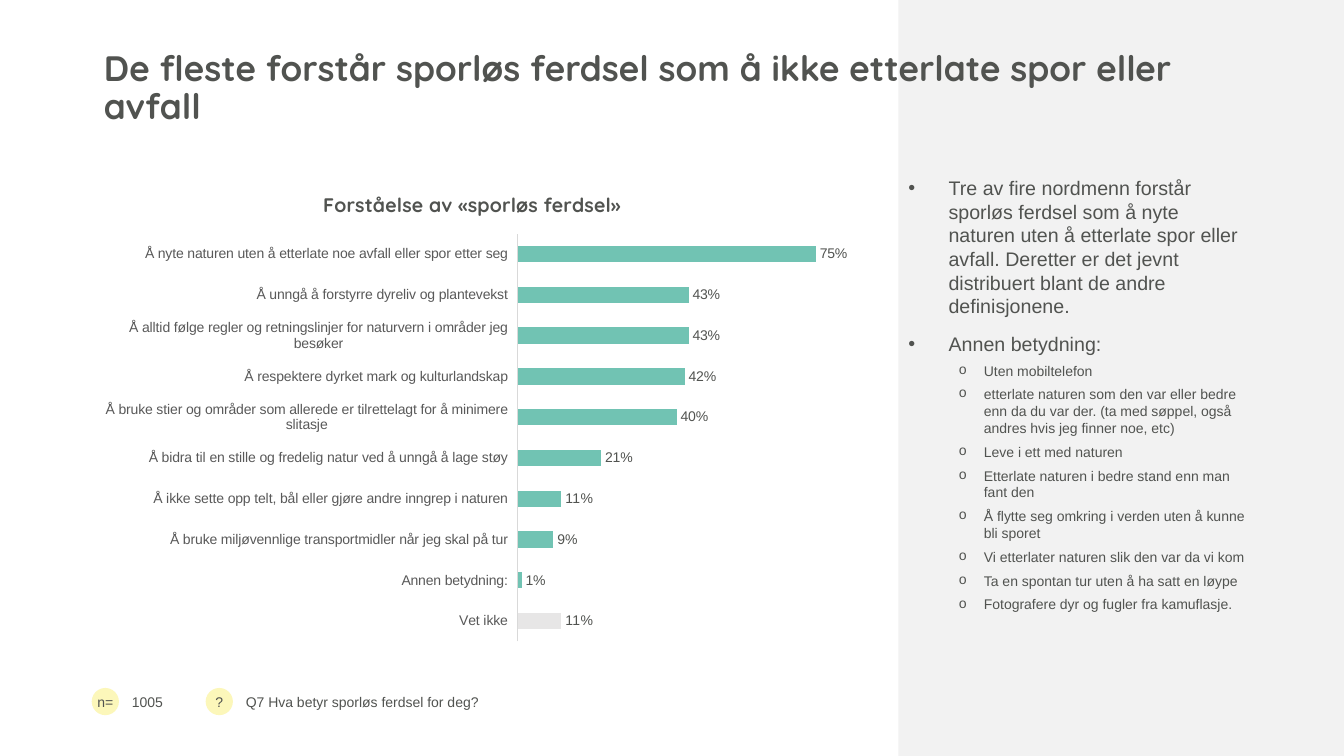
from lxml import etree
from pptx import Presentation
from pptx.chart.data import CategoryChartData
from pptx.dml.color import RGBColor
from pptx.enum.chart import XL_CHART_TYPE as ChartType, XL_LABEL_POSITION as LabelPos
from pptx.enum.chart import XL_TICK_LABEL_POSITION as TickPos, XL_TICK_MARK as TickMark
from pptx.enum.shapes import MSO_SHAPE as Shape
from pptx.enum.text import MSO_ANCHOR as Anchor, MSO_AUTO_SIZE as AutoSize, PP_ALIGN as Align
from pptx.oxml import parse_xml
from pptx.oxml.ns import nsdecls, qn
from pptx.util import Inches, Pt

COLORS = {
    "text": "515350", "label": "595959", "axis": "D9D9D9", "panel": "F2F2F2",
    "bar": "71C3B3", "unknown": "E7E6E6", "badge": "FCF7BA",
}
BODY, HEAD = "Arial", "Quicksand"
WIDTH, HEIGHT = 13.33, 7.5
LEFT, TOP = 0.93, 1.7
PANEL_X = 8.91

TITLE = "De fleste forstår sporløs ferdsel som å ikke etterlate spor eller avfall"
CHART_TITLE = "Forståelse av «sporløs ferdsel»"
ANSWERS = [
    ("Å nyte naturen uten å etterlate noe avfall eller spor etter seg", 0.75),
    ("Å unngå å forstyrre dyreliv og plantevekst", 0.43),
    ("Å alltid følge regler og retningslinjer for naturvern i områder jeg besøker", 0.43),
    ("Å respektere dyrket mark og kulturlandskap", 0.42),
    ("Å bruke stier og områder som allerede er tilrettelagt for å minimere slitasje", 0.40),
    ("Å bidra til en stille og fredelig natur ved å unngå å lage støy", 0.21),
    ("Å ikke sette opp telt, bål eller gjøre andre inngrep i naturen", 0.11),
    ("Å bruke miljøvennlige transportmidler når jeg skal på tur", 0.09),
    ("Annen betydning:", 0.01),
    ("Vet ikke", 0.11),
]
FINDINGS = [
    (0, "Tre av fire nordmenn forstår sporløs ferdsel som å nyte naturen uten å "
        "etterlate spor eller avfall. Deretter er det jevnt distribuert blant de "
        "andre definisjonene."),
    (0, "Annen betydning:"),
    (1, "Uten mobiltelefon"),
    (1, "etterlate naturen som den var eller bedre enn da du var der. "
        "(ta med søppel, også andres hvis jeg finner noe, etc)"),
    (1, "Leve i ett med naturen"),
    (1, "Etterlate naturen i bedre stand enn man fant den"),
    (1, "Å flytte seg omkring i verden uten å kunne bli sporet"),
    (1, "Vi etterlater naturen slik den var da vi kom"),
    (1, "Ta en spontan tur uten å ha satt en løype"),
    (1, "Fotografere dyr og fugler fra kamuflasje."),
]
# Per level: bullet, its font, text size, space before, left margin, hanging indent
LEVELS = [("•", "Arial", 14, 10, 0.4, 0.4), ("o", "Courier New", 10, 5, 0.75, 0.25)]


def rgb(name):
    return RGBColor.from_string(COLORS[name])


def inches(box):
    return [Inches(v) for v in box]


def style(font, size, color="text", name=BODY, bold=False):
    font.size, font.name, font.bold = Pt(size), name, bold
    font.color.rgb = rgb(color)


def add_shape(s, kind, box, color):
    sp = s.shapes.add_shape(kind, *inches(box))
    sp.shadow.inherit = False
    sp.fill.solid()
    sp.fill.fore_color.rgb = rgb(color)
    sp.line.fill.background()
    return sp


def add_text(s, box, anchor=Anchor.TOP):
    tf = s.shapes.add_textbox(*inches(box)).text_frame
    tf.word_wrap = True
    tf.vertical_anchor = anchor
    return tf


def add_title(s, box):
    sp = s.shapes.title
    sp.left, sp.top, sp.width, sp.height = inches(box)
    tf = sp.text_frame
    tf.text = TITLE
    tf.word_wrap, tf.auto_size = True, AutoSize.NONE
    tf.vertical_anchor = Anchor.BOTTOM
    p = tf.paragraphs[0]
    p.alignment, p.line_spacing = Align.LEFT, 0.9
    style(p.runs[0].font, 25.2, name=HEAD, bold=True)


def set_bullet(p, char, font, margin, hanging):
    pPr = p._p.get_or_add_pPr()
    pPr.set("marL", str(Inches(margin)))
    pPr.set("indent", str(-Inches(hanging)))
    etree.SubElement(pPr, qn("a:buFont")).set("typeface", font)
    etree.SubElement(pPr, qn("a:buChar")).set("char", char)


def add_findings(s, box):
    x, y, w, h = box
    panel = add_shape(s, Shape.RECTANGLE, box, "panel")
    s.shapes.title.element.addprevious(panel.element)  # behind the title
    tf = add_text(s, (x, TOP, 0.8 * w, h - TOP - 1.46))
    for i, (level, text) in enumerate(FINDINGS):
        char, bullet_font, size, before, margin, hanging = LEVELS[level]
        p = tf.add_paragraph() if i else tf.paragraphs[0]
        p.text, p.level = text, level
        set_bullet(p, char, bullet_font, margin, hanging)
        p.space_before = Pt(before if i else 0)
        style(p.runs[0].font, size)


def set_plot_area(chart, **shares):
    parts = "".join(f'<c:{k} val="{v}"/>' for k, v in shares.items())
    layout = parse_xml(
        f'<c:layout {nsdecls("c")}><c:manualLayout><c:layoutTarget val="inner"/>'
        f'<c:xMode val="edge"/><c:yMode val="edge"/>{parts}</c:manualLayout></c:layout>')
    area = chart.element.find(".//" + qn("c:plotArea"))
    for old in area.findall(qn("c:layout")):
        area.remove(old)
    area.insert(0, layout)


def add_answers(s, box):
    data = CategoryChartData(number_format="0%")
    data.categories = [text for text, _ in ANSWERS]
    data.add_series("Series 1", [share for _, share in ANSWERS])
    chart = s.shapes.add_chart(ChartType.BAR_CLUSTERED, *inches(box), data).chart
    style(chart.font, 10)
    chart.has_legend = False
    chart.has_title = True
    chart.chart_title.include_in_layout = False
    tf = chart.chart_title.text_frame
    tf.text = CHART_TITLE
    style(tf.paragraphs[0].runs[0].font, 14, name=HEAD, bold=True)
    set_plot_area(chart, x=0.56, y=0.13, w=0.42, h=0.85)

    # Axes
    cats, vals = chart.category_axis, chart.value_axis
    cats.reverse_order = True
    cats.major_tick_mark = TickMark.NONE
    cats.tick_label_position = TickPos.LOW
    style(cats.tick_labels.font, 10, "label")
    cats.format.line.color.rgb = rgb("axis")
    cats.format.line.width = Pt(0.75)
    vals.visible = vals.has_major_gridlines = False
    vals.minimum_scale, vals.maximum_scale = 0, 0.8

    # Bars and labels
    plot = chart.plots[0]
    plot.gap_width, plot.vary_by_categories = 150, False
    bars = plot.series[0]
    bars.invert_if_negative = False
    for bar, color in ((bars, "bar"), (bars.points[len(ANSWERS) - 1], "unknown")):
        bar.format.fill.solid()
        bar.format.fill.fore_color.rgb = rgb(color)
    plot.has_data_labels = True
    labels = plot.data_labels
    labels.show_value = True
    labels.number_format, labels.number_format_is_linked = "0%", False
    labels.position = LabelPos.OUTSIDE_END
    style(labels.font, 10)


def add_note(s, box, mark, text):
    x, y, w, h = box
    size = 0.27
    badge = add_shape(s, Shape.OVAL, (x, y + (h - size) / 2, size, size), "badge")
    tf = badge.text_frame
    tf.margin_left = tf.margin_right = tf.margin_top = tf.margin_bottom = 0
    tf.word_wrap, tf.vertical_anchor = False, Anchor.MIDDLE
    note = add_text(s, (x + 0.3, y, w - 0.3, h), Anchor.MIDDLE)
    for frame, words, align in ((tf, mark, Align.CENTER), (note, text, Align.LEFT)):
        frame.text = words
        frame.paragraphs[0].alignment = align
        style(frame.paragraphs[0].runs[0].font, 10)


def main():
    prs = Presentation()
    prs.slide_width, prs.slide_height = Inches(WIDTH), Inches(HEIGHT)
    s = prs.slides.add_slide(prs.slide_layouts[5])
    add_title(s, (LEFT, 0.39, 11.52, 0.92))
    add_findings(s, (PANEL_X, 0, WIDTH - PANEL_X, HEIGHT))
    add_answers(s, (LEFT, TOP, 7.51, 4.76))
    add_note(s, (0.91, 6.67, 1.04, 0.58), "n=", "1005")
    add_note(s, (2.04, 6.67, 6.5, 0.58), "?", "Q7 Hva betyr sporløs ferdsel for deg?")
    prs.save("out.pptx")


if __name__ == "__main__":
    main()
